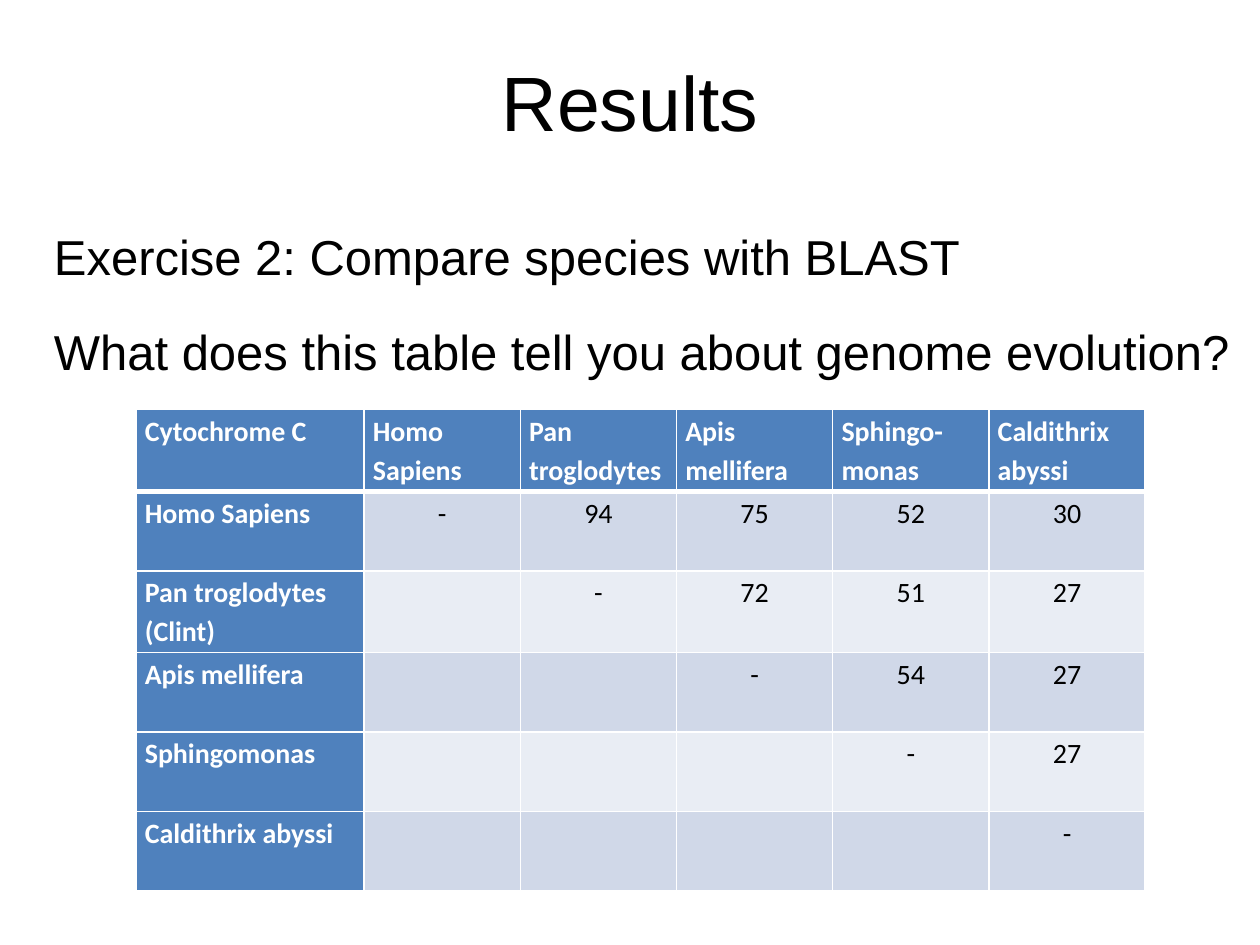
from lxml import etree
from pptx import Presentation, util as u
from pptx.dml.color import RGBColor
from pptx.enum import text
from pptx.oxml.ns import qn

COLORS = {
    "ink": "000000",
    "white": "FFFFFF",
    "header": "4F81BD",
    "odd": "D0D8E8",
    "even": "E9EDF4",
}
SPECIES = ["Homo Sapiens", "Pan troglodytes", "Apis mellifera",
           "Sphingo-monas", "Caldithrix abyssi"]
ROW_NAMES = ["Homo Sapiens", "Pan troglodytes (Clint)", "Apis mellifera",
             "Sphingomonas", "Caldithrix abyssi"]
# Upper triangle of the similarity matrix, starting right of the diagonal
SIMILARITY = [[94, 75, 52, 30], [72, 51, 27], [54, 27], [27], []]
COLUMN_WIDTHS = [1.81] + [1.24] * 5
ROW_HEIGHTS = [0.65, 0.63, 0.65, 0.63, 0.63, 0.63]


def color(name):
    return RGBColor.from_string(COLORS[name])


class SlideBuilder:
    """Holds the style and the current slide."""

    heading_font = "Arial"
    table_font = "Calibri"

    def __init__(self, page):
        self.page = page

    def style(self, paragraph, font, size, ink, bold=False, align=None):
        paragraph.font.name = font
        paragraph.font.size = u.Pt(size)
        paragraph.font.bold = bold
        paragraph.font.color.rgb = color(ink)
        paragraph.alignment = align

    def text_box(self, words, area, size, align=None, before=0,
                 anchor=text.MSO_ANCHOR.TOP):
        box = self.page.shapes.add_textbox(*map(u.Inches, area))
        frame = box.text_frame
        frame.word_wrap = True
        frame.vertical_anchor = anchor
        paragraph = frame.paragraphs[0]
        paragraph.text = words
        paragraph.space_before = u.Pt(before)
        self.style(paragraph, self.heading_font, size, "ink", align=align)

    def cell_borders(self, cell, widths):
        properties = cell._tc.get_or_add_tcPr()
        for index, (side, width) in enumerate(zip("LRTB", widths)):
            line = etree.Element(qn(f"a:ln{side}"), w=str(u.Pt(width)))
            fill = etree.SubElement(line, qn("a:solidFill"))
            etree.SubElement(fill, qn("a:srgbClr"), val=COLORS["white"])
            properties.insert(index, line)

    def cell(self, cell, words, fill, is_label):
        cell.margin_left = cell.margin_right = u.Inches(0.07)
        cell.margin_top = cell.margin_bottom = 0
        cell.fill.solid()
        cell.fill.fore_color.rgb = color(fill)
        paragraph = cell.text_frame.paragraphs[0]
        paragraph.text = words
        paragraph.line_spacing = 1.15
        self.style(paragraph, self.table_font, 16,
                   "white" if is_label else "ink", is_label,
                   None if is_label else text.PP_ALIGN.CENTER)

    def table(self, rows, left, top):
        frame = self.page.shapes.add_table(
            len(rows), len(rows[0]), u.Inches(left), u.Inches(top),
            u.Inches(sum(COLUMN_WIDTHS)), u.Inches(sum(ROW_HEIGHTS)))
        table = frame.table
        for column, width in zip(table.columns, COLUMN_WIDTHS):
            column.width = u.Inches(width)
        for r, (row, values) in enumerate(zip(table.rows, rows)):
            row.height = u.Inches(ROW_HEIGHTS[r])
            for c, value in enumerate(values):
                is_label = r == 0 or c == 0
                band = "odd" if r % 2 else "even"
                cell = table.cell(r, c)
                self.cell(cell, value, "header" if is_label else band, is_label)
                # The rule under the header row is heavier
                self.cell_borders(cell, (1, 1, 3 if r == 1 else 1,
                                         3 if r == 0 else 1))


def main():
    deck = Presentation()
    deck.slide_width, deck.slide_height = u.Inches(10), u.Inches(7.5)
    slide = SlideBuilder(deck.slides.add_slide(deck.slide_layouts[6]))

    # Title and questions
    slide.text_box("Results", (0.5, 0.17, 9, 1.25), 44,
                   text.PP_ALIGN.CENTER, anchor=text.MSO_ANCHOR.MIDDLE)
    slide.text_box("Exercise 2: Compare species with BLAST",
                   (0.33, 1.75, 9.58, 0.83), 28, before=5.6)
    slide.text_box("What does this table tell you about genome evolution?",
                   (0.33, 2.5, 10.09, 0.75), 28, before=5.6)

    # Similarity table
    rows = [["Cytochrome C"] + SPECIES]
    for index, (name, scores) in enumerate(zip(ROW_NAMES, SIMILARITY)):
        rows.append([name] + [""] * index + ["-"] + [str(s) for s in scores])
    slide.table(rows, 1.08, 3.25)

    deck.save("out.pptx")


if __name__ == "__main__":
    main()
